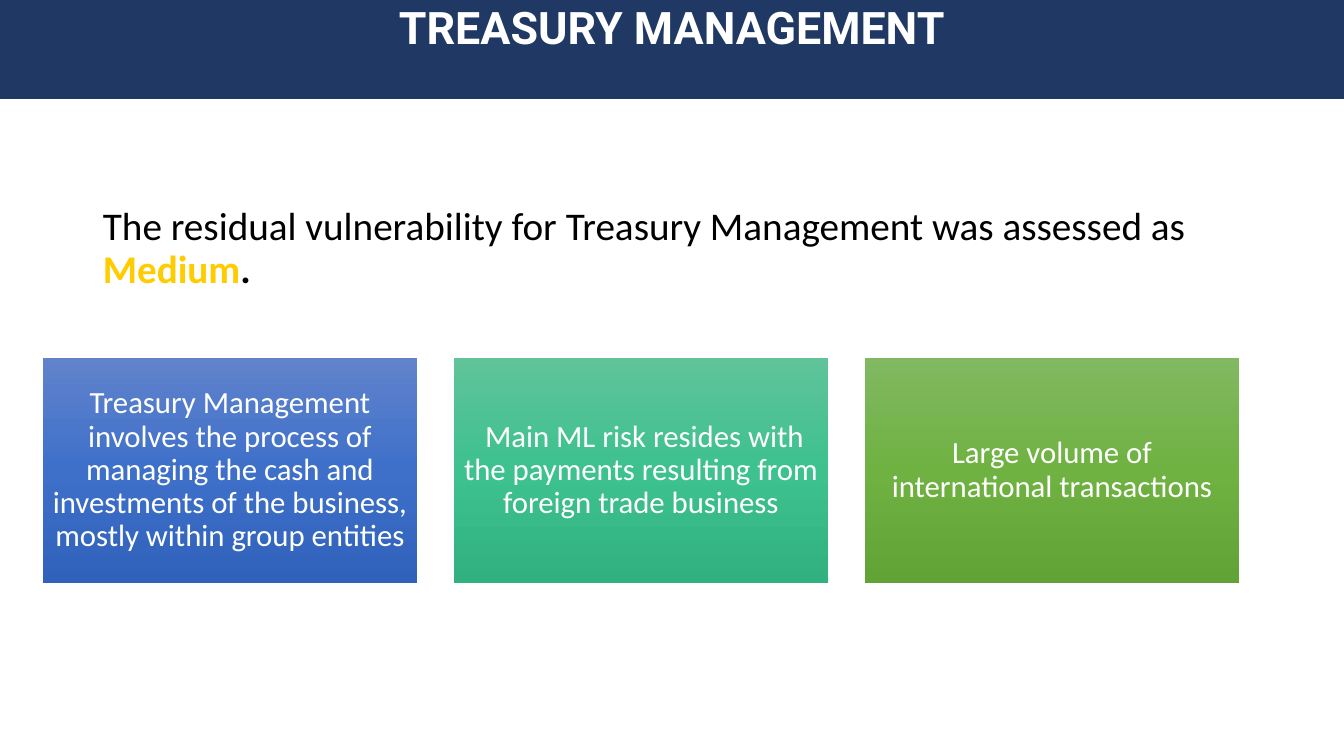
from copy import deepcopy

from pptx import Presentation
from pptx.dml.color import RGBColor
from pptx.enum import shapes, text
from pptx.oxml import ns
from pptx.util import Pt

PX = 914400 / 100.8
WHITE = RGBColor(0xFF, 0xFF, 0xFF)
BLACK = RGBColor(0, 0, 0)
NAVY = RGBColor(0x20, 0x38, 0x64)
AMBER = RGBColor(0xFF, 0xCC, 0x00)
BLUES = [RGBColor(0x61, 0x83, 0xCB), RGBColor(0x3E, 0x70, 0xCA), RGBColor(0x30, 0x62, 0xBB)]
TEALS = [RGBColor(0x60, 0xC3, 0x9A), RGBColor(0x3D, 0xC1, 0x8F), RGBColor(0x31, 0xB0, 0x80)]
GREENS = [RGBColor(0x81, 0xB8, 0x61), RGBColor(0x6F, 0xB2, 0x42), RGBColor(0x62, 0xA3, 0x36)]


def px(length):
    return round(length * PX)


def write(box, spans, frame_format, para_format):
    frame = box.text_frame
    frame.word_wrap = True
    for name, value in frame_format.items():
        setattr(frame, name, value)
    para = frame.paragraphs[0]
    for name, value in para_format.items():
        setattr(para, name, value)
    for words, font_format, color in spans:
        span = para.add_run()
        span.text = words
        for name, value in font_format.items():
            setattr(span.font, name, value)
        span.font.color.rgb = color


deck = Presentation()
deck.slide_width, deck.slide_height = px(1344), px(756)
page = deck.slides.add_slide(deck.slide_layouts[6])

banner = page.shapes.add_shape(shapes.MSO_SHAPE.RECTANGLE, 0, 0, px(1344), px(99))
banner.shadow.inherit = False
banner.fill.solid()
banner.fill.fore_color.rgb = NAVY
banner.line.fill.background()
write(banner,
      [("TREASURY MANAGEMENT", {"name": "Roboto", "size": Pt(32), "bold": True}, WHITE)],
      {"vertical_anchor": text.MSO_ANCHOR.TOP, "margin_top": 0},
      {"alignment": text.PP_ALIGN.CENTER})

summary = page.shapes.add_textbox(px(93), px(202), px(1159), px(120))
plain = {"name": "Calibri", "size": Pt(28)}
strong = {**plain, "bold": True}
write(summary,
      [("The residual vulnerability for Treasury Management was assessed as ", plain, BLACK),
       ("Medium", strong, AMBER),
       (".", strong, BLACK)],
      {}, {"line_spacing": 0.9})

cards = [
    ("Treasury Management involves the process of managing the cash and investments "
     "of the business, mostly within group entities", BLUES),
    (" Main ML risk resides with the payments resulting from foreign trade business", TEALS),
    ("Large volume of international transactions", GREENS),
]
sides = ("margin_left", "margin_top", "margin_right", "margin_bottom")
card_frame = {"vertical_anchor": text.MSO_ANCHOR.MIDDLE, **dict.fromkeys(sides, px(9))}
for index, (words, shades) in enumerate(cards):
    card = page.shapes.add_shape(shapes.MSO_SHAPE.RECTANGLE,
                                 px(43 + 411 * index), px(358), px(374), px(225))
    card.shadow.inherit = False
    card.line.fill.background()
    card.fill.gradient()
    card.fill.gradient_angle = 270
    stop_list = card.element.spPr.find(".//" + ns.qn("a:gsLst"))
    stop_list.append(deepcopy(stop_list[0]))
    for stop, position, shade in zip(card.fill.gradient_stops, (0, 0.5, 1), shades):
        stop.position = position
        stop.color.rgb = shade
    write(card, [(words, {"name": "Calibri", "size": Pt(22)}, WHITE)], card_frame,
          {"alignment": text.PP_ALIGN.CENTER, "line_spacing": 0.9})

deck.save("out.pptx")
